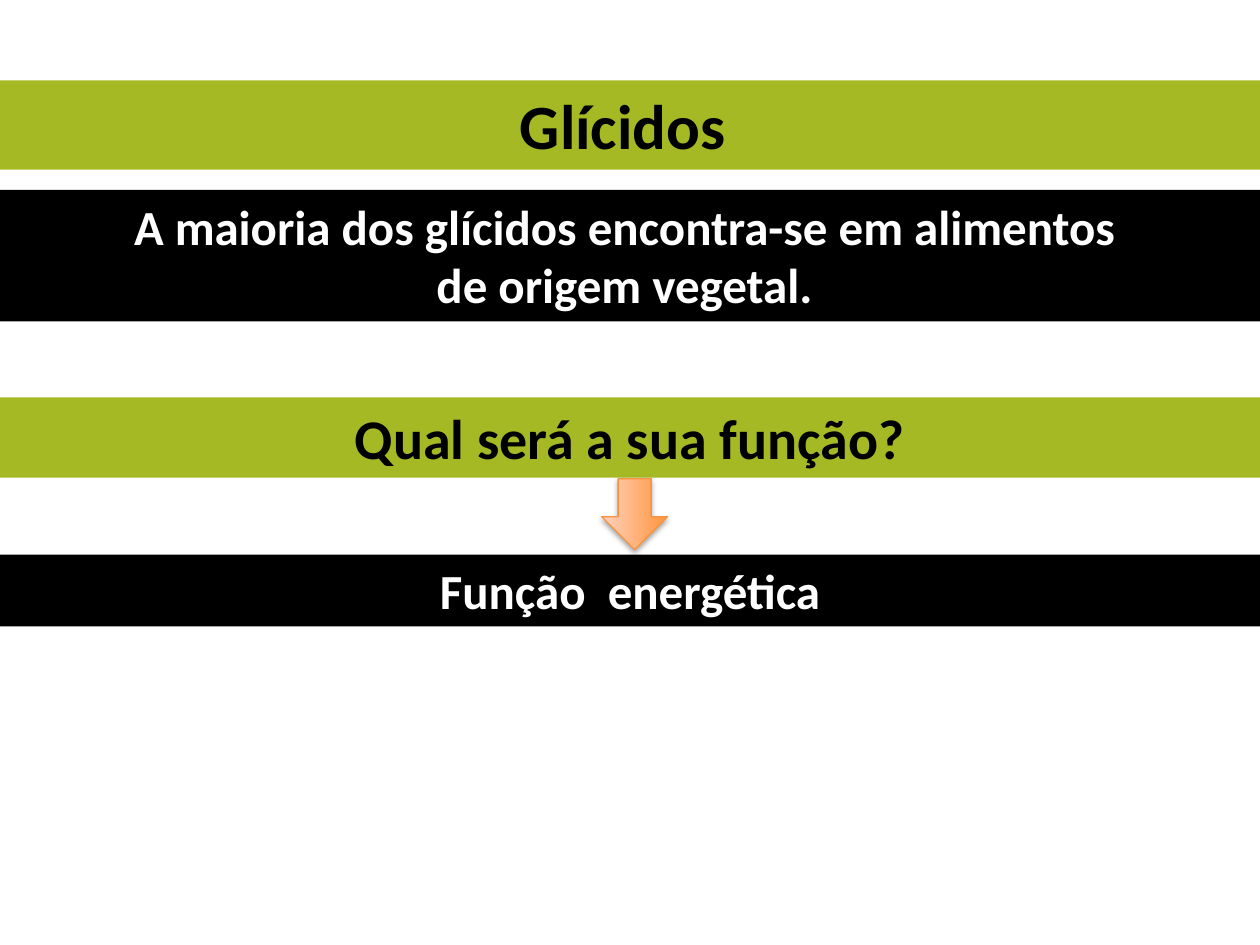
import lxml.etree
import pptx
import pptx.dml.color
import pptx.enum.shapes
import pptx.enum.text
import pptx.oxml
import pptx.oxml.ns
import pptx.util
from pptx.util import Cm

COLOURS = {
    "green": "A4B924",
    "black": "000000",
    "white": "FFFFFF",
    "arrow dark": "FF953E",
    "arrow light": "FFD2BD",
    "arrow line": "F69240",
}
SLIDE_WIDTH, SLIDE_HEIGHT = Cm(25.4), Cm(19.05)


def colour(name):
    return pptx.dml.color.RGBColor.from_string(COLOURS[name])


def write_text(shape, text, *, size, color, font="Calibri", bold=True):
    """Put one centred paragraph into a shape; a newline is a line break."""
    frame = shape.text_frame
    frame.word_wrap = True
    frame.vertical_anchor = pptx.enum.text.MSO_ANCHOR.TOP
    paragraph = frame.paragraphs[0]
    paragraph.text = text
    paragraph.alignment = pptx.enum.text.PP_ALIGN.CENTER
    for run in paragraph.runs:
        run.font.name = font
        run.font.size = pptx.util.Pt(size)
        run.font.bold = bold
        run.font.color.rgb = colour(color)


class FoodSlide:
    """Holds the current slide and the style of its bands and arrow."""

    def __init__(self, presentation):
        self.slide = presentation.slides.add_slide(presentation.slide_layouts[6])

    def add_shape(self, kind, left, top, width, height):
        shape = self.slide.shapes.add_shape(kind, left, top, width, height)
        shape.shadow.inherit = False
        return shape

    def band(self, text, top, height, *, fill, color, size):
        """Full-width strip with a line of text."""
        shape = self.add_shape(pptx.enum.shapes.MSO_SHAPE.RECTANGLE,
                               0, Cm(top), SLIDE_WIDTH, Cm(height))
        shape.fill.solid()
        shape.fill.fore_color.rgb = colour(fill)
        shape.line.fill.background()
        write_text(shape, text, size=size, color=color)

    def question(self, text, top, height, size):
        self.band(text, top, height, fill="green", color="black", size=size)

    def answer(self, text, top, height):
        self.band(text, top, height, fill="black", color="white", size=28)

    def down_arrow(self, left, top, width, height):
        """Left arrow turned to point down, with gradient and soft shadow."""
        shape = self.add_shape(pptx.enum.shapes.MSO_SHAPE.LEFT_ARROW,
                               Cm(left), Cm(top), Cm(width), Cm(height))
        shape.rotation = 270
        shape.fill.gradient()
        shape.fill.gradient_angle = 90
        for stop, name, position in zip(shape.fill.gradient_stops,
                                        ("arrow dark", "arrow light"), (0, 1)):
            stop.color.rgb = colour(name)
            stop.position = position
        shape.line.color.rgb = colour("arrow line")
        shape.line.width = pptx.util.Pt(0.75)
        self.drop_shadow(shape, blur=3.1, distance=1.8, opacity=35)

    def drop_shadow(self, shape, *, blur, distance, opacity):
        qn = pptx.oxml.ns.qn
        effects = shape.element.spPr.find(qn("a:effectLst"))
        shadow = lxml.etree.SubElement(
            effects, qn("a:outerShdw"),
            blurRad=str(int(pptx.util.Pt(blur))),
            dist=str(int(pptx.util.Pt(distance))),
            dir="5400000", rotWithShape="0")
        tint = lxml.etree.SubElement(shadow, qn("a:srgbClr"), val=COLOURS["black"])
        lxml.etree.SubElement(tint, qn("a:alpha"), val=str(opacity * 1000))


def main():
    presentation = pptx.Presentation()
    presentation.slide_width = SLIDE_WIDTH
    presentation.slide_height = SLIDE_HEIGHT
    slide = FoodSlide(presentation)

    # Title and statement
    slide.question("Glícidos ", 1.62, 1.8, size=36)
    slide.answer("A maioria dos glícidos encontra-se em alimentos \n"
                 "de origem vegetal. ", 3.83, 2.65)

    # Question, and the arrow to its answer
    slide.question("Qual será a sua função?", 8.01, 1.62, size=32)
    slide.answer("Função  energética", 11.18, 1.45)
    slide.down_arrow(12.08, 9.7, 1.43, 1.33)

    presentation.save("out.pptx")


if __name__ == "__main__":
    main()
